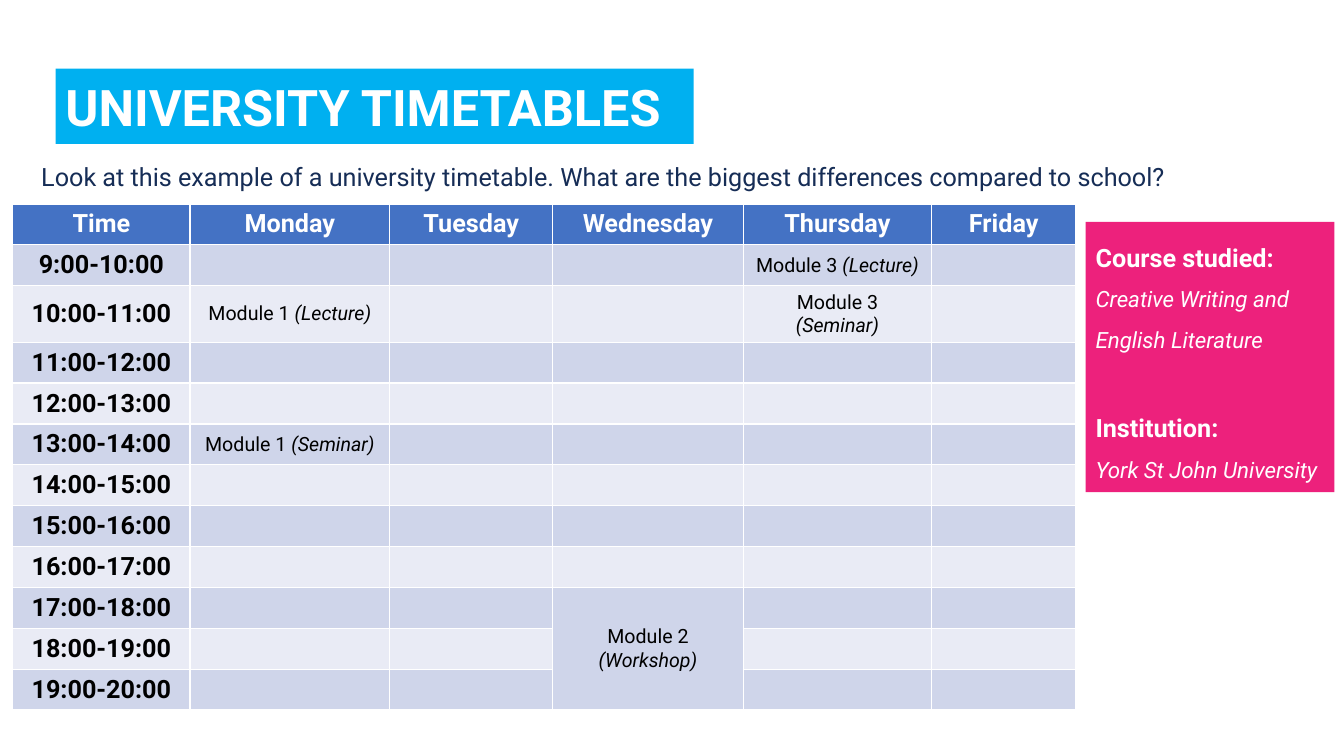
from dataclasses import dataclass

from pptx import Presentation
from pptx import util as u
from pptx.dml import color
from pptx.enum import shapes, text


@dataclass(frozen=True)
class Theme:
    font: str = "Roboto"
    white: str = "FFFFFF"
    black: str = "000000"
    navy: str = "162D56"
    sky: str = "00B0F0"
    pink: str = "ED217C"
    header: str = "4472C4"
    bands: tuple = ("CFD5EA", "E9EBF5")
    title: int = 36
    body: int = 18
    detail: int = 16
    module: int = 14


THEME = Theme()

DAYS = ["Monday", "Tuesday", "Wednesday", "Thursday", "Friday"]
COLUMN_WIDTHS = [4.47, 5.03, 4.11, 4.8, 4.75, 3.63]
ROW_HEIGHT = 1.03
FIRST_HOUR, LAST_HOUR = 9, 19
SESSIONS = [
    ("Monday", 10, 1, "Module 1 ", "(Lecture)"),
    ("Monday", 13, 1, "Module 1 ", "(Seminar)"),
    ("Wednesday", 17, 3, "Module 2 ", "(Workshop)"),
    ("Thursday", 9, 1, "Module 3 ", "(Lecture)"),
    ("Thursday", 10, 1, "Module 3 ", "(Seminar)"),
]


def style_run(run, size, colour, bold=False, italic=False):
    run.font.name = THEME.font
    run.font.size = u.Pt(size)
    run.font.bold = bold
    run.font.italic = italic
    run.font.color.rgb = color.RGBColor.from_string(colour)


def write(paragraph, words, size, colour, bold=False, italic=False):
    paragraph.text = words
    style_run(paragraph.runs[0], size, colour, bold, italic)


def fill_with(target, colour):
    target.fill.solid()
    target.fill.fore_color.rgb = color.RGBColor.from_string(colour)


def add_panel(slide, left, top, width, height, colour, anchor):
    panel = slide.shapes.add_shape(
        shapes.MSO_SHAPE.RECTANGLE, u.Cm(left), u.Cm(top), u.Cm(width), u.Cm(height)
    )
    panel.shadow.inherit = False
    panel.line.fill.background()
    fill_with(panel, colour)
    panel.text_frame.word_wrap = True
    panel.text_frame.vertical_anchor = anchor
    return panel.text_frame


def add_title(slide):
    title = add_panel(slide, 1.4, 1.73, 16.08, 1.9, THEME.sky, text.MSO_ANCHOR.MIDDLE)
    heading = title.paragraphs[0]
    heading.alignment = text.PP_ALIGN.LEFT
    write(heading, "UNIVERSITY TIMETABLES", THEME.title, THEME.white, bold=True)


def add_question(slide):
    question = slide.shapes.add_textbox(u.Cm(0.79), u.Cm(3.94), u.Cm(30.96), u.Cm(1.03))
    question.text_frame.word_wrap = True
    write(
        question.text_frame.paragraphs[0],
        "Look at this example of a university timetable. "
        "What are the biggest differences compared to school?",
        THEME.body,
        THEME.navy,
    )


def centre(cell):
    cell.vertical_anchor = text.MSO_ANCHOR.MIDDLE
    paragraph = cell.text_frame.paragraphs[0]
    paragraph.alignment = text.PP_ALIGN.CENTER
    return paragraph


def add_session(timetable, day, hour, hours, module, kind):
    row, column = hour - FIRST_HOUR + 1, DAYS.index(day) + 1
    cell = timetable.cell(row, column)
    if hours > 1:
        cell.merge(timetable.cell(row + hours - 1, column))
    label = centre(cell)
    write(label, module, THEME.module, THEME.black)
    kind_run = label.add_run()
    kind_run.text = kind
    style_run(kind_run, THEME.module, THEME.black, italic=True)


def add_timetable(slide):
    hours = range(FIRST_HOUR, LAST_HOUR + 1)
    rows = len(hours) + 1
    timetable = slide.shapes.add_table(
        rows, len(COLUMN_WIDTHS), u.Cm(0.32), u.Cm(5.14),
        u.Cm(sum(COLUMN_WIDTHS)), u.Cm(ROW_HEIGHT * rows),
    ).table
    for column, width in zip(timetable.columns, COLUMN_WIDTHS):
        column.width = u.Cm(width)
    for index, row in enumerate(timetable.rows):
        row.height = u.Cm(ROW_HEIGHT)
        for cell in row.cells:
            fill_with(cell, THEME.bands[(index - 1) % 2] if index else THEME.header)
    for column, name in enumerate(["Time"] + DAYS):
        write(centre(timetable.cell(0, column)), name, THEME.body, THEME.white, bold=True)
    for row, hour in enumerate(hours, 1):
        slot = f"{hour}:00-{hour + 1}:00"
        write(centre(timetable.cell(row, 0)), slot, THEME.body, THEME.black, bold=True)
    for session in SESSIONS:
        add_session(timetable, *session)


def add_course(slide):
    course = add_panel(slide, 27.36, 5.59, 6.27, 6.81, THEME.pink, text.MSO_ANCHOR.TOP)
    facts = [
        ("Course studied:", "Creative Writing and English Literature"),
        ("Institution:", "York St John University"),
    ]
    course.text = "\n".join(line for fact in facts for line in fact)
    for index, line in enumerate(course.paragraphs):
        is_label = index % 2 == 0
        line.alignment = text.PP_ALIGN.LEFT
        line.line_spacing = 1.5
        if is_label and index:
            line.space_before = u.Pt(32)
        size = THEME.body if is_label else THEME.detail
        style_run(line.runs[0], size, THEME.white, bold=is_label, italic=not is_label)


def main():
    deck = Presentation()
    deck.slide_width, deck.slide_height = u.Cm(33.87), u.Cm(19.05)
    slide = deck.slides.add_slide(deck.slide_layouts[6])
    add_title(slide)
    add_timetable(slide)
    add_question(slide)
    add_course(slide)
    deck.save("out.pptx")


if __name__ == "__main__":
    main()
